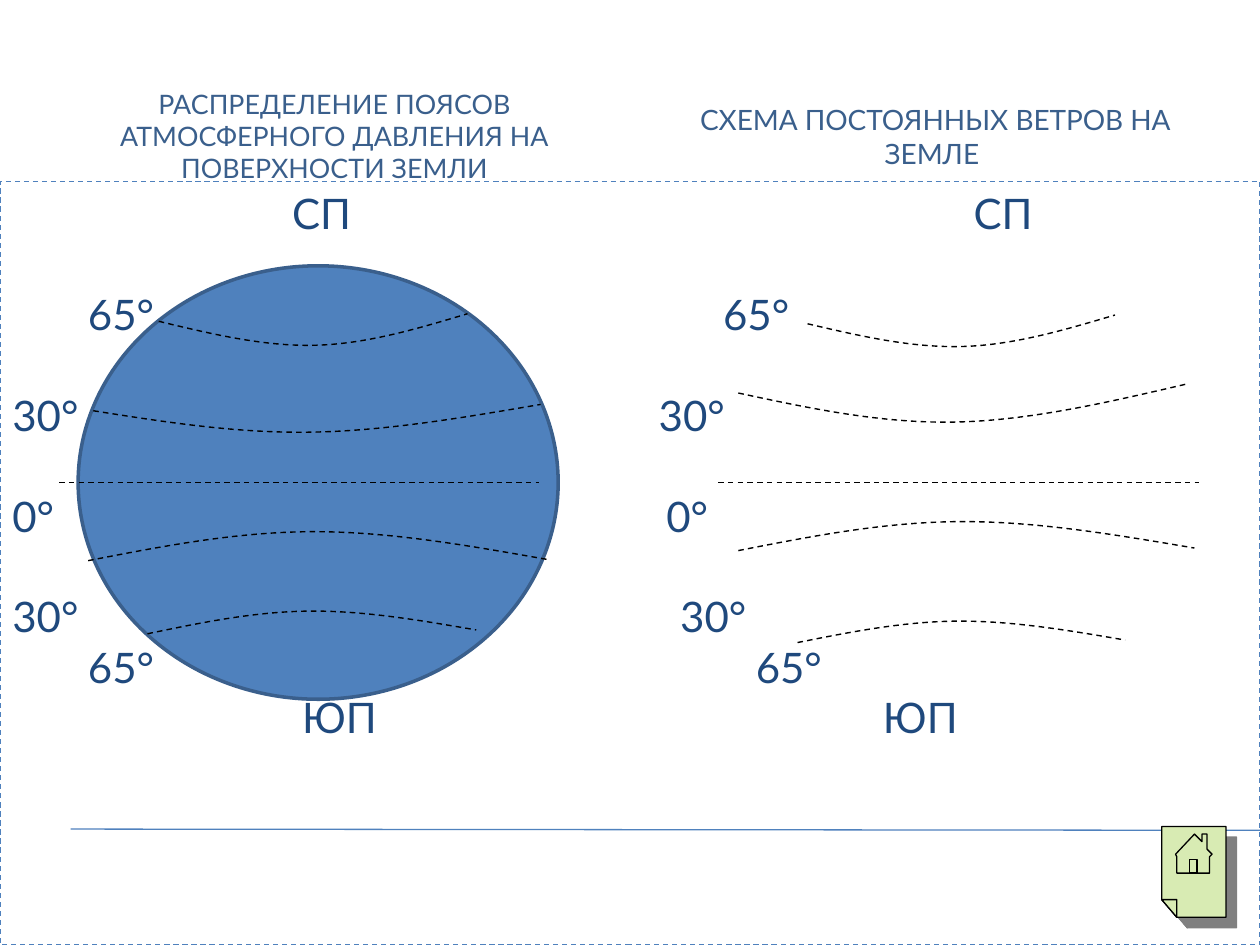
"""Build a slide comparing pressure belts and constant winds on the globe."""
from lxml.etree import SubElement
from pptx import Presentation
from pptx.dml.color import RGBColor
from pptx.enum.dml import MSO_LINE
from pptx.enum.shapes import MSO_CONNECTOR, MSO_SHAPE
from pptx.enum.text import MSO_ANCHOR, MSO_AUTO_SIZE, PP_ALIGN
from pptx.oxml.ns import qn
from pptx.util import Inches, Pt

BLUE = RGBColor(0x4F, 0x81, 0xBD)
DARK_BLUE = RGBColor(0x3A, 0x5F, 0x8C)
NAVY = RGBColor(0x1F, 0x49, 0x7D)
BLACK = RGBColor(0, 0, 0)
GREEN = RGBColor(0xD8, 0xEB, 0xB3)
GRAY = RGBColor(0x80, 0x80, 0x80)
FONT = "Lato"


def add_outline(page, points, close, width):
    """Draw a black freeform through points given in inches."""
    places = [(Inches(x), Inches(y)) for x, y in points]
    builder = page.shapes.build_freeform(*places[0])
    builder.add_line_segments(places[1:], close=close)
    shape = builder.convert_to_shape()
    shape.shadow.inherit = False
    shape.line.color.rgb = BLACK
    shape.line.width = Pt(width)
    return shape


def add_step(shape, path, tag, points):
    """Append one drawing step to a freeform path, with points in inches."""
    step = SubElement(path, qn(tag))
    for x, y in points:
        SubElement(step, qn("a:pt"), x=str(Inches(x) - shape.left), y=str(Inches(y) - shape.top))


deck = Presentation()
deck.slide_width, deck.slide_height = Inches(10), Inches(7.5)
page = deck.slides.add_slide(deck.slide_layouts.get_by_name("Comparison"))
holders = {holder.placeholder_format.idx: holder for holder in page.placeholders}
for index in (0, 2, 4):
    holders[index].element.getparent().remove(holders[index].element)

headings = [
    (1, 0.31, 15.3, "РАСПРЕДЕЛЕНИЕ ПОЯСОВ АТМОСФЕРНОГО ДАВЛЕНИЯ НА ПОВЕРХНОСТИ ЗЕМЛИ"),
    (3, 5.08, 16, "СХЕМА ПОСТОЯННЫХ ВЕТРОВ НА ЗЕМЛЕ "),
]
for index, left, size, text in headings:
    box = holders[index]
    box.left, box.top, box.width, box.height = [Inches(v) for v in (left, 0.73, 4.69, 0.7)]
    frame = box.text_frame
    frame.text = text
    frame.auto_size = MSO_AUTO_SIZE.NONE
    frame.vertical_anchor = MSO_ANCHOR.MIDDLE
    para = frame.paragraphs[0]
    para.alignment = PP_ALIGN.CENTER
    para.space_before = Pt(0)
    span = para.runs[0]
    span.font.color.rgb = DARK_BLUE
    for name, value in {"name": FONT, "size": Pt(size), "bold": False}.items():
        setattr(span.font, name, value)

labels = [
    ("СП", 2.22, 7.63, 0),
    ("65°", 0.6, 5.64, 1),
    ("30°", 0, 5.13, 1),
    ("0°", 0, 5.19, 1),
    ("30°", 0, 5.3, 1),
    ("65°", 0.6, 5.9, 0),
    ("ЮП", 2.3, 6.91, 0),
]
body = page.shapes.add_shape(MSO_SHAPE.RECTANGLE, 0, Inches(1.44), Inches(10), Inches(6.06))
body.shadow.inherit = False
body.fill.background()
body.line.color.rgb = BLUE
body.line.width = Pt(0.75)
body.line.dash_style = MSO_LINE.DASH
frame = body.text_frame
frame.word_wrap = True
frame.vertical_anchor = MSO_ANCHOR.TOP
for row, (label, left_tab, right_tab, skipped_lines) in enumerate(labels):
    para = frame.paragraphs[0] if row == 0 else frame.add_paragraph()
    para.alignment = PP_ALIGN.LEFT
    tabs = SubElement(para._p.get_or_add_pPr(), qn("a:tabLst"))
    for stop in (left_tab, right_tab):
        if stop:
            SubElement(tabs, qn("a:tab"), pos=str(Inches(stop)), algn="l")
    para.space_before = Pt(28.8 * skipped_lines)
    span = para.add_run()
    span.text = ("\t" if left_tab else "") + label + "\t" + label
    span.font.name = FONT
    span.font.size = Pt(24)
    span.font.color.rgb = NAVY

globe = page.shapes.add_shape(
    MSO_SHAPE.OVAL, Inches(0.62), Inches(2.11), Inches(3.81), Inches(3.44))
globe.shadow.inherit = False
globe.fill.solid()
globe.fill.fore_color.rgb = BLUE
globe.line.color.rgb = DARK_BLUE
globe.line.width = Pt(2)

parallels = [
    ((1.26, 2.55), (2.5, 2.74), (3.71, 2.49)),
    ((6.41, 2.57), (7.64, 2.75), (8.85, 2.5)),
    ((0.74, 3.26), (2.46, 3.43), (4.29, 3.21)),
    ((5.86, 3.12), (7.58, 3.35), (9.41, 3.05)),
    ((0.7, 4.45), (2.48, 4.22), (4.34, 4.44)),
    ((5.86, 4.37), (7.62, 4.14), (9.48, 4.35)),
    ((1.17, 5.03), (2.45, 4.85), (3.78, 5)),
    ((6.33, 5.1), (7.6, 4.93), (8.93, 5.08)),
]
for start, middle, end in parallels:
    parallel = add_outline(page, (start, middle, end), False, 0.79)
    parallel.fill.background()
    parallel.line.dash_style = MSO_LINE.DASH
    slope = [(last - first) / 6 for first, last in zip(start, end)]
    before = [m - s for m, s in zip(middle, slope)]
    after = [m + s for m, s in zip(middle, slope)]
    near_start = [(a + b) / 2 for a, b in zip(start, before)]
    near_end = [(a + b) / 2 for a, b in zip(after, end)]
    path = next(parallel._element.iter(qn("a:path")))
    for straight in path.findall(qn("a:lnTo")):
        path.remove(straight)
    add_step(parallel, path, "a:cubicBezTo", (near_start, before, middle))
    add_step(parallel, path, "a:cubicBezTo", (after, near_end, end))

straight_lines = [
    (0.47, 3.83, 4.28, 3.83, BLACK, 0.79, MSO_LINE.DASH),
    (5.7, 3.83, 9.52, 3.83, BLACK, 0.79, MSO_LINE.DASH),
    (0.56, 6.58, 10, 6.59, BLUE, 0.75, MSO_LINE.SOLID),
]
for *ends, color, width, dash in straight_lines:
    connector = page.shapes.add_connector(MSO_CONNECTOR.STRAIGHT, *[Inches(v) for v in ends])
    connector.line.color.rgb = color
    connector.line.width = Pt(width)
    connector.line.dash_style = dash
    SubElement(connector._element.spPr, qn("a:effectLst"))

sheet = [(9.22, 6.56), (9.73, 6.56), (9.73, 7.28), (9.34, 7.28), (9.22, 7.14)]
fold = [(9.22, 7.14), (9.34, 7.14), (9.34, 7.28)]
house = [(9.34, 6.8), (9.34, 6.93), (9.6, 6.93), (9.6, 6.8), (9.62, 6.78), (9.58, 6.74),
         (9.58, 6.62), (9.54, 6.62), (9.54, 6.68), (9.48, 6.62), (9.33, 6.78)]
door = [(9.44, 6.93), (9.44, 6.82), (9.5, 6.82), (9.5, 6.93)]
home_icon = add_outline(page, sheet, True, 0.75)
home_icon.fill.solid()
home_icon.fill.fore_color.rgb = GREEN
sheet_path = next(home_icon._element.iter(qn("a:path")))
for points in (fold, house, door):
    path = SubElement(sheet_path.getparent(), qn("a:path"),
                      w=sheet_path.get("w"), h=sheet_path.get("h"))
    add_step(home_icon, path, "a:moveTo", points[:1])
    for point in points[1:]:
        add_step(home_icon, path, "a:lnTo", [point])
    SubElement(path, qn("a:close"))
effects = home_icon._element.spPr.find(qn("a:effectLst"))
shadow = SubElement(effects, qn("a:outerShdw"), dist=str(Pt(8.5)), dir="2700000",
                    algn="ctr", rotWithShape="0")
SubElement(shadow, qn("a:srgbClr"), val=str(GRAY))

deck.save("out.pptx")
